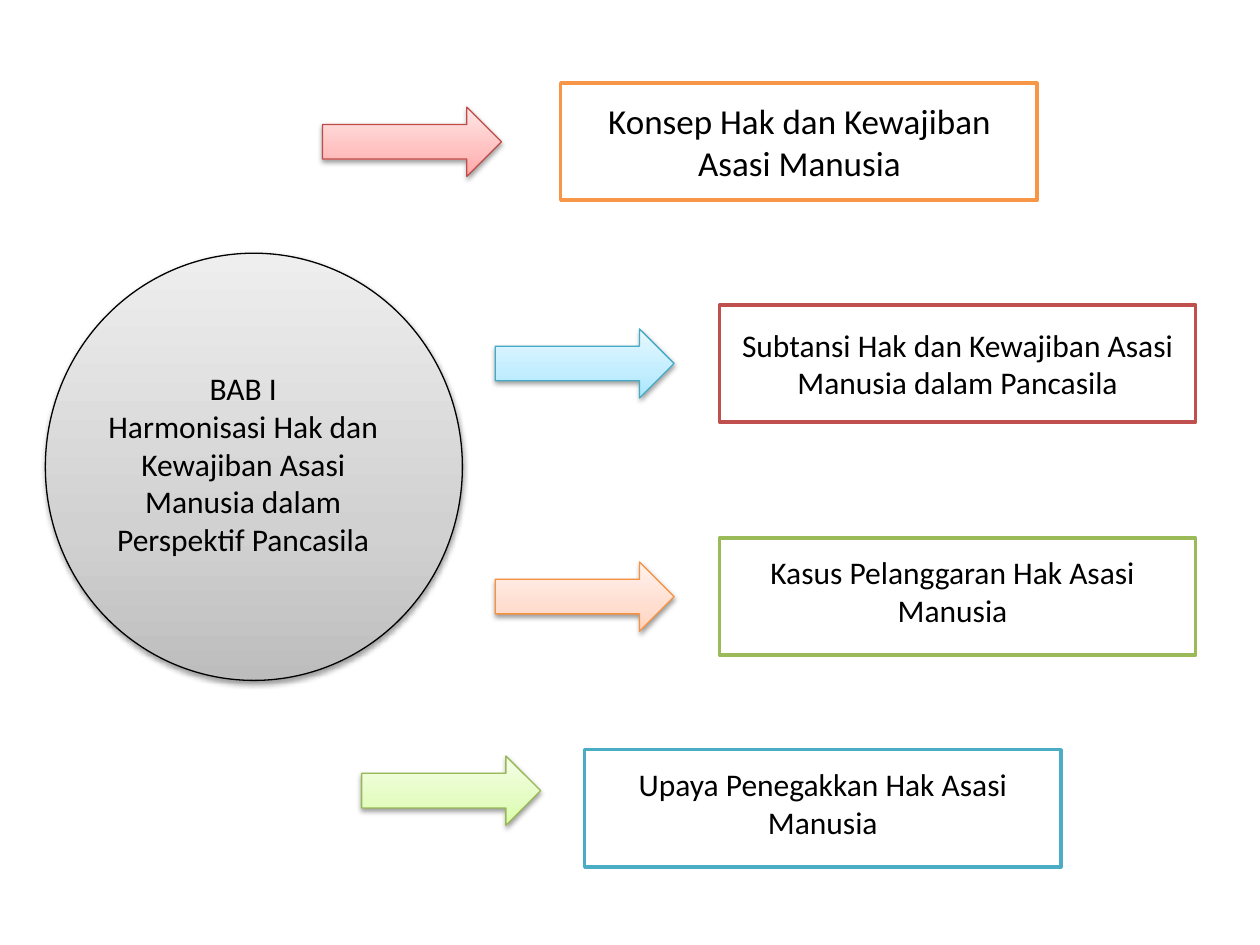
"""Build the chapter overview slide: a topic circle, arrows and four subtopic boxes."""
from copy import deepcopy
from dataclasses import dataclass

from lxml.etree import SubElement
from pptx import Presentation
from pptx.dml.color import RGBColor
from pptx.enum.shapes import MSO_SHAPE as Shape
from pptx.enum.text import MSO_ANCHOR as Anchor, MSO_AUTO_SIZE as AutoSize, PP_ALIGN as Align
from pptx.oxml.ns import qn
from pptx.util import Inches, Pt


@dataclass(frozen=True)
class Theme:
    font: str = "Calibri"
    body: int = 18
    large: int = 20
    text: str = "000000"
    box: str = "FFFFFF"
    thin: float = 0.75
    thick: float = 2
    orange: str = "F79646"
    red: str = "C0504D"
    green: str = "9BBB59"
    aqua: str = "4BACC6"
    gray_fade: tuple = ("BDBDBD", "D1D1D1", "EEEEEE")
    aqua_fade: tuple = ("A7E6FF", "C1EDFF", "E7F8FF")
    orange_fade: tuple = ("FFD2BD", "FFDED0", "FFF2ED")
    green_fade: tuple = ("DAFDA7", "E4FCC2", "F5FFE7")
    red_fade: tuple = ("FFA6A5", "FFC0BF", "FFE7E7")
    aqua_edge: str = "46AAC5"
    orange_edge: str = "F69240"
    green_edge: str = "98B955"
    red_edge: str = "BF4C48"


THEME = Theme()
ARROW_SIZE = (1.42, 0.55)
BOX_SIZE = (3.78, 0.93)


def rgb(value):
    return RGBColor.from_string(value)


def add_outlined(s, kind, at, line, width):
    sp = s.shapes.add_shape(kind, *map(Inches, at))
    sp.shadow.inherit = False
    sp.line.color.rgb = rgb(line)
    sp.line.width = Pt(width)
    return sp


def add_shadow(sp):
    effects = sp._element.spPr.find(qn("a:effectLst"))
    shadow = SubElement(effects, qn("a:outerShdw"), blurRad=str(Pt(3.1)),
                        dist=str(Pt(1.6)), dir="5400000", rotWithShape="0")
    color = SubElement(shadow, qn("a:srgbClr"), val=THEME.text)
    SubElement(color, qn("a:alpha"), val="38000")


def add_faded(s, kind, at, fade, line):
    sp = add_outlined(s, kind, at, line, THEME.thin)
    sp.fill.gradient()
    sp.fill.gradient_angle = 90
    stops = sp._element.spPr.find(qn("a:gradFill")).find(qn("a:gsLst"))
    stops.append(deepcopy(stops[0]))
    for stop, position, color in zip(sp.fill.gradient_stops, (0, 0.35, 1), fade):
        stop.position = position
        stop.color.rgb = rgb(color)
    add_shadow(sp)


def add_box(s, left, top, line):
    sp = add_outlined(s, Shape.RECTANGLE, (left, top, *BOX_SIZE), line, THEME.thick)
    sp.fill.solid()
    sp.fill.fore_color.rgb = rgb(THEME.box)
    return sp


def write(tf, lines, size):
    tf.word_wrap = True
    for i, line in enumerate(lines):
        p = tf.add_paragraph() if i else tf.paragraphs[0]
        p.alignment = Align.CENTER
        r = p.add_run()
        r.text = line
        r.font.name = THEME.font
        r.font.size = Pt(size)
        r.font.color.rgb = rgb(THEME.text)


def add_label(s, at, lines, size=THEME.body):
    tf = s.shapes.add_textbox(*map(Inches, at)).text_frame
    write(tf, lines, size)
    tf.auto_size = AutoSize.SHAPE_TO_FIT_TEXT


def main():
    prs = Presentation()
    prs.slide_width, prs.slide_height = Inches(10), Inches(7.5)
    s = prs.slides.add_slide(prs.slide_layouts[6])

    add_faded(s, Shape.OVAL, (0.36, 2.01, 3.31, 3.39), THEME.gray_fade, THEME.text)
    add_label(s, (0.59, 2.88, 2.68, 1.62), [
        "BAB I",
        "Harmonisasi Hak dan Kewajiban Asasi Manusia dalam Perspektif Pancasila",
    ])

    arrows = [
        (3.93, 2.61, THEME.aqua_fade, THEME.aqua_edge),
        (3.93, 4.46, THEME.orange_fade, THEME.orange_edge),
        (2.87, 6, THEME.green_fade, THEME.green_edge),
        (2.56, 0.85, THEME.red_fade, THEME.red_edge),
    ]
    for left, top, fade, line in arrows:
        add_faded(s, Shape.RIGHT_ARROW, (left, top, *ARROW_SIZE), fade, line)

    add_box(s, 4.45, 0.66, THEME.orange)
    substance = add_box(s, 5.71, 2.42, THEME.red)
    add_box(s, 5.71, 4.27, THEME.green)
    add_box(s, 4.64, 5.95, THEME.aqua)

    substance.text_frame.vertical_anchor = Anchor.MIDDLE
    write(substance.text_frame,
          ["Subtansi Hak dan Kewajiban Asasi Manusia dalam Pancasila"], THEME.body)
    add_label(s, (4.55, 0.74, 3.59, 0.77),
              ["Konsep Hak dan Kewajiban Asasi Manusia"], THEME.large)
    add_label(s, (5.79, 4.34, 3.54, 0.71), ["Kasus Pelanggaran Hak Asasi Manusia"])
    add_label(s, (4.64, 6.02, 3.78, 0.71), ["Upaya Penegakkan Hak Asasi Manusia"])

    prs.save("out.pptx")


if __name__ == "__main__":
    main()
